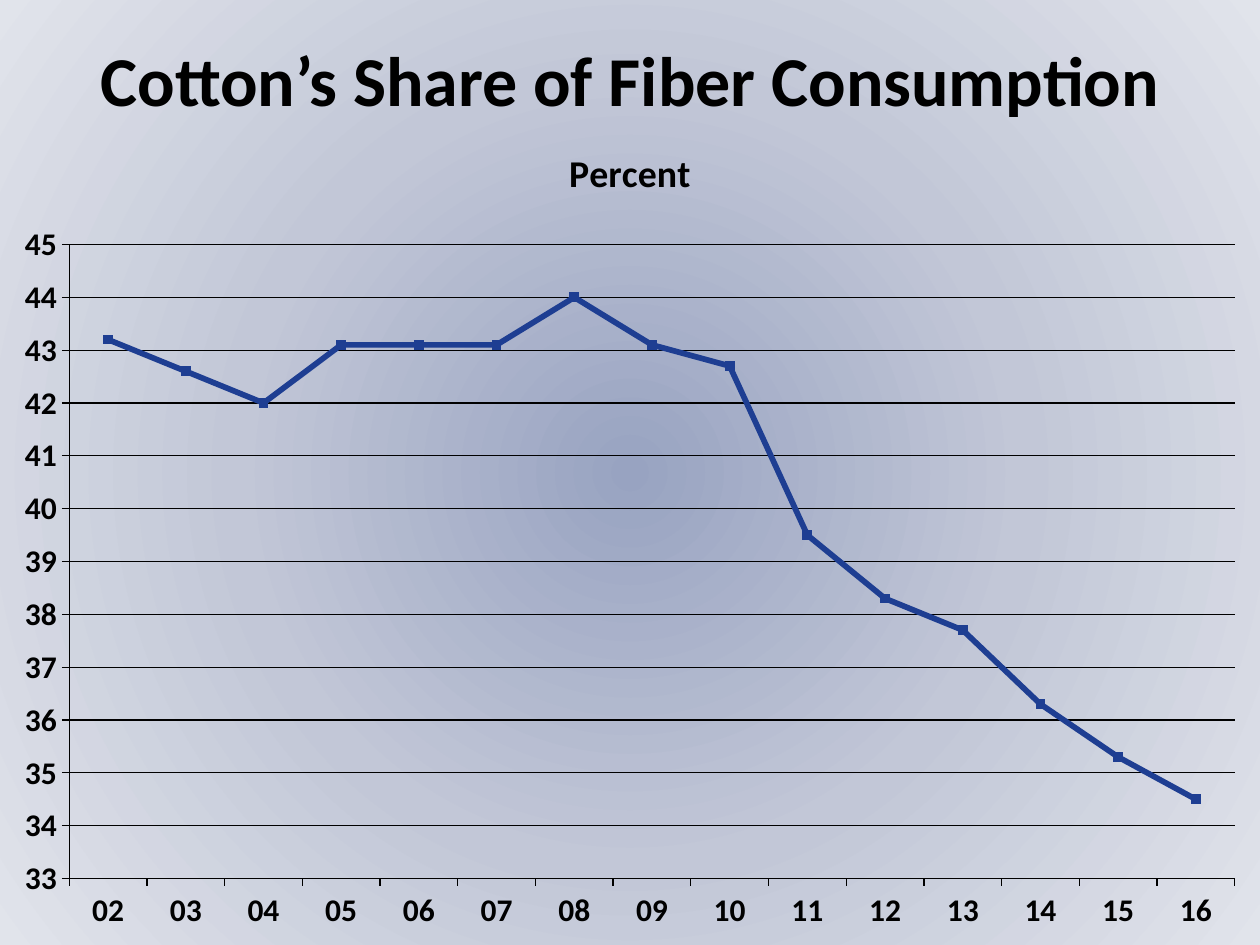
import lxml.etree
import pptx
import pptx.chart.data
import pptx.dml.color
import pptx.enum.chart
import pptx.enum.text
import pptx.oxml
import pptx.oxml.ns
import pptx.util
from pptx.util import Cm

BLACK = pptx.dml.color.RGBColor(0x00, 0x00, 0x00)
BLUE = pptx.dml.color.RGBColor(0x1E, 0x3E, 0x92)
INNER = pptx.dml.color.RGBColor(0x98, 0xA3, 0xC1)
MIDDLE = pptx.dml.color.RGBColor(0xC2, 0xC7, 0xD7)
OUTER = pptx.dml.color.RGBColor(0xE1, 0xE4, 0xEB)

WIDTH, HEIGHT = Cm(25.4), Cm(19.05)
SHARES = [43.2, 42.6, 42, 43.1, 43.1, 43.1, 44, 43.1,
          42.7, 39.5, 38.3, 37.7, 36.3, 35.3, 34.5]
YEARS = [f"{year:02d}" for year in range(2, 2 + len(SHARES))]
PLOT = {"x": 0.055, "y": 0.155, "w": 0.925, "h": 0.765}


def apply(target, values):
    for name, value in values.items():
        setattr(target, name, value)


def style(font, size):
    apply(font, {"name": "Calibri", "size": pptx.util.Pt(size), "bold": True})
    font.color.rgb = BLACK


def stroke(line, color, width):
    line.color.rgb = color
    line.width = pptx.util.Pt(width)


def shade(slide):
    """Fill the background with a gradient that spreads from the centre."""
    slide.background.fill.gradient()
    grad = slide.element.find(".//" + pptx.oxml.ns.qn("a:gradFill"))
    stops = "".join(
        f'<a:gs pos="{pos}"><a:srgbClr val="{color}"/></a:gs>'
        for pos, color in ((0, INNER), (50000, MIDDLE), (100000, OUTER)))
    radial = pptx.oxml.parse_xml(
        f'<a:gradFill {pptx.oxml.ns.nsdecls("a")} rotWithShape="1">'
        f'<a:gsLst>{stops}</a:gsLst><a:path path="circle">'
        '<a:fillToRect l="50000" t="50000" r="50000" b="50000"/>'
        '</a:path></a:gradFill>')
    grad.getparent().replace(grad, radial)


def add_title(slide, text):
    box = slide.shapes.add_textbox(Cm(1.27), 0, Cm(22.86), Cm(3.18))
    frame = box.text_frame
    apply(frame, {"word_wrap": True, "text": text,
                  "vertical_anchor": pptx.enum.text.MSO_ANCHOR.MIDDLE})
    para = frame.paragraphs[0]
    para.alignment = pptx.enum.text.PP_ALIGN.CENTER
    style(para.runs[0].font, 40)


def place_plot(chart):
    """Fix the inner plot area at the fractions in PLOT."""
    qn = pptx.oxml.ns.qn
    area = chart.element.find(".//" + qn("c:plotArea"))
    for old in area.findall(qn("c:layout")):
        area.remove(old)
    layout = lxml.etree.Element(qn("c:layout"))
    manual = lxml.etree.SubElement(layout, qn("c:manualLayout"))
    modes = {"layoutTarget": "inner", "xMode": "edge", "yMode": "edge"}
    for tag, value in (modes | PLOT).items():
        lxml.etree.SubElement(manual, qn("c:" + tag), val=str(value))
    area.insert(0, layout)


def set_axes(chart):
    outside = pptx.enum.chart.XL_TICK_MARK.OUTSIDE
    for axis in (chart.category_axis, chart.value_axis):
        axis.major_tick_mark = outside
        style(axis.tick_labels.font, 18)
        stroke(axis.format.line, BLACK, 0.75)
    axis = chart.value_axis
    apply(axis, {"minimum_scale": 33, "maximum_scale": 45,
                 "major_unit": 1, "has_major_gridlines": True})
    apply(axis.tick_labels, {"number_format": "#,##0",
                             "number_format_is_linked": False})
    stroke(axis.major_gridlines.format.line, BLACK, 0.75)


def set_line(series):
    series.smooth = False
    stroke(series.format.line, BLUE, 3.25)
    marker = series.marker
    apply(marker, {"style": pptx.enum.chart.XL_MARKER_STYLE.SQUARE, "size": 5})
    marker.format.fill.solid()
    marker.format.fill.fore_color.rgb = BLUE
    stroke(marker.format.line, BLUE, 0.75)


def add_graph(slide):
    data = pptx.chart.data.CategoryChartData()
    data.categories = YEARS
    data.add_series("Series 1", SHARES)
    top = Cm(2.34)
    chart = slide.shapes.add_chart(
        pptx.enum.chart.XL_CHART_TYPE.LINE_MARKERS,
        0, top, WIDTH, HEIGHT - top, data).chart
    apply(chart, {"has_legend": False, "has_title": True})
    style(chart.font, 18)
    title = chart.chart_title
    title.include_in_layout = False
    title.text_frame.text = "Percent"
    style(title.text_frame.paragraphs[0].runs[0].font, 21.6)
    chart.plots[0].vary_by_categories = False
    set_axes(chart)
    set_line(chart.plots[0].series[0])
    place_plot(chart)


def main():
    deck = pptx.Presentation()
    apply(deck, {"slide_width": WIDTH, "slide_height": HEIGHT})
    slide = deck.slides.add_slide(deck.slide_layouts[6])
    shade(slide)
    add_title(slide, "Cotton’s Share of Fiber Consumption")
    add_graph(slide)
    deck.save("out.pptx")


if __name__ == "__main__":
    main()
